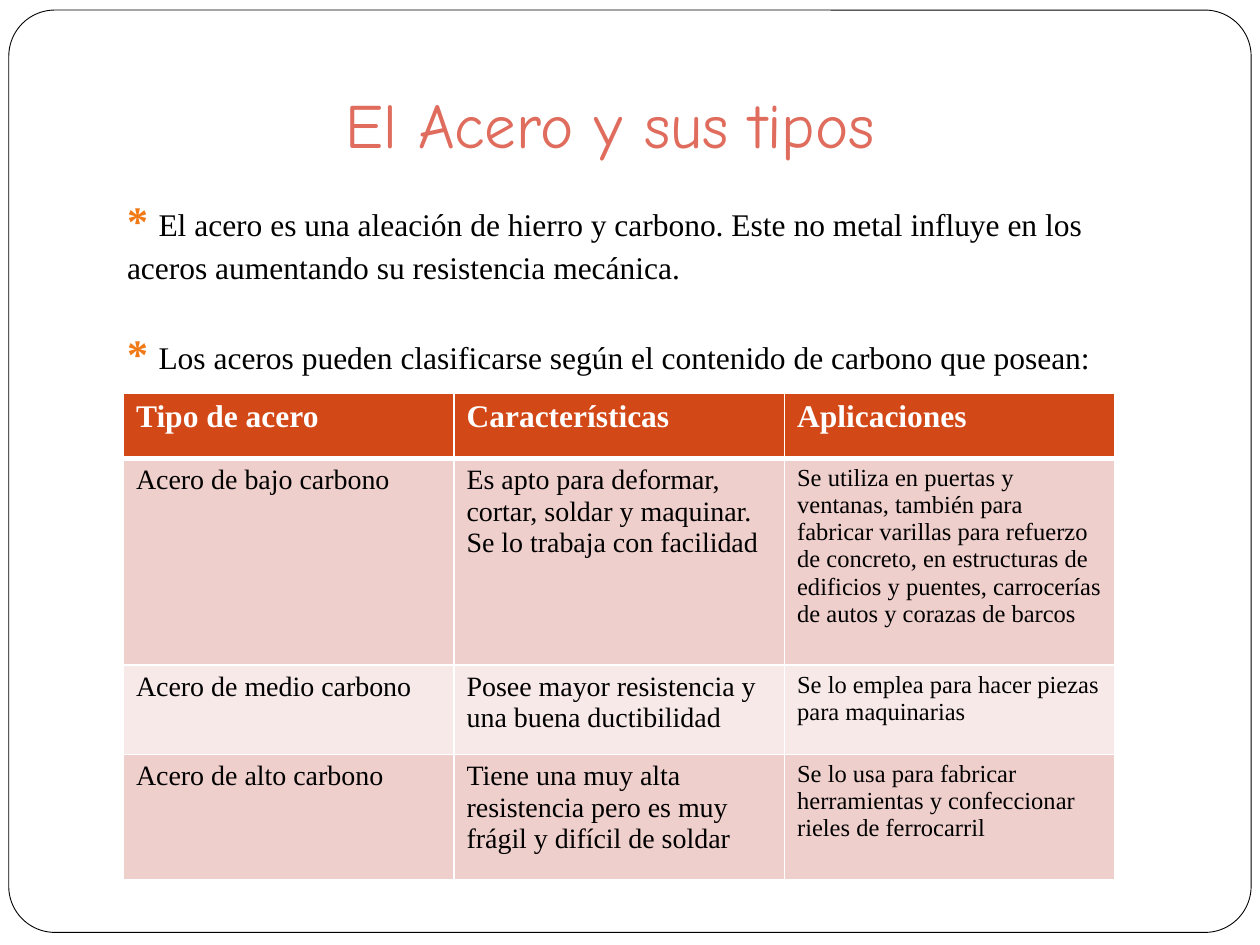
from lxml import etree
from pptx import Presentation
from pptx.dml.color import RGBColor
from pptx.enum.shapes import MSO_SHAPE
from pptx.enum.text import MSO_ANCHOR, PP_ALIGN
from pptx.oxml.ns import qn
from pptx.util import Inches, Pt

ROUNDED = MSO_SHAPE.ROUNDED_RECTANGLE
BOTTOM, LEFT = MSO_ANCHOR.BOTTOM, PP_ALIGN.LEFT

WHITE = RGBColor(0xFF, 0xFF, 0xFF)
BLACK = RGBColor(0, 0, 0)
CORAL = RGBColor(0xDF, 0x6C, 0x5D)
ORANGE = RGBColor(0xF1, 0x7A, 0x17)
HEADER = RGBColor(0xD3, 0x48, 0x17)
BANDS = [RGBColor(0xEF, 0xCF, 0xCC), RGBColor(0xF7, 0xE9, 0xE8)]

SERIF, HAND = "Times New Roman", "Comic Neue"

POINTS = [
    "El acero es una aleación de hierro y carbono. Este no metal influye en los "
    "aceros aumentando su resistencia mecánica.",
    "Los aceros pueden clasificarse según el contenido de carbono que posean:",
]
STEELS = [
    ["Tipo de acero", "Características", "Aplicaciones"],
    ["Acero de bajo carbono",
     "Es apto para deformar, cortar, soldar y maquinar. Se lo trabaja con facilidad",
     "Se utiliza en puertas y ventanas, también para fabricar varillas para refuerzo "
     "de concreto, en estructuras de edificios y puentes, carrocerías de autos y "
     "corazas de barcos"],
    ["Acero de medio carbono",
     "Posee mayor resistencia y una buena ductibilidad",
     "Se lo emplea para hacer piezas para maquinarias"],
    ["Acero de alto carbono",
     "Tiene una muy alta resistencia pero es muy frágil y difícil de soldar",
     "Se lo usa para fabricar herramientas y confeccionar rieles de ferrocarril"],
]
ROW_HEIGHTS = [0.52, 1.64, 0.71, 0.99]
BODY_SIZES = [16, 16, 14]


def box(left, top, width, height):
    return [Inches(v) for v in (left, top, width, height)]


def style(font, size, color, name=SERIF, bold=False):
    font.size, font.name, font.bold = Pt(size), name, bold
    font.color.rgb = color


def add_frame(s):
    sp = s.shapes.add_shape(ROUNDED, *box(0.07, 0.08, 9.86, 7.32))
    sp.adjustments[0] = 0.05
    sp.shadow.inherit = False
    sp.fill.solid()
    sp.fill.fore_color.rgb = WHITE
    sp.line.color.rgb = BLACK
    sp.line.width = Pt(0.5)
    # Behind the title
    s.shapes._spTree.insert(2, sp._element)


def set_title(s, text):
    title = s.shapes.title
    title.left, title.top, title.width, title.height = box(2.64, 0.13, 6.13, 1.25)
    tf = title.text_frame
    tf.text = text
    tf.vertical_anchor = BOTTOM
    tf.margin_bottom = Inches(0.1)
    p = tf.paragraphs[0]
    p.alignment = LEFT
    style(p.font, 36, CORAL, HAND)


def add_points(s, points):
    tf = s.shapes.add_textbox(*box(0.91, 1.47, 8.19, 1.51)).text_frame
    tf.word_wrap = True
    for i, text in enumerate(points):
        p = tf.add_paragraph() if i else tf.paragraphs[0]
        p.line_spacing = 1.07
        p.space_before = Pt(22 if i else 0)
        star, r = p.add_run(), p.add_run()
        star.text, r.text = "* ", text
        style(star.font, 24, ORANGE, bold=True)
        style(r.font, 18, BLACK)


def set_borders(cell, widths):
    """Draw white borders; widths maps each side (L, R, T, B) to points."""
    tcPr = cell._tc.get_or_add_tcPr()
    for i, (side, width) in enumerate(widths.items()):
        ln = etree.Element(qn(f"a:ln{side}"), w=str(Pt(width)))
        fill = etree.SubElement(ln, qn("a:solidFill"))
        etree.SubElement(fill, qn("a:srgbClr"), val=str(WHITE))
        tcPr.insert(i, ln)


def add_steel_table(s):
    cols = len(STEELS[0])
    table = s.shapes.add_table(len(STEELS), cols,
                               *box(0.98, 3.12, 7.87, sum(ROW_HEIGHTS))).table
    for row, height in zip(table.rows, ROW_HEIGHTS):
        row.height = Inches(height)
    for i, texts in enumerate(STEELS):
        for j, text in enumerate(texts):
            cell = table.cell(i, j)
            cell.text = text
            cell.fill.solid()
            cell.fill.fore_color.rgb = BANDS[(i - 1) % 2] if i else HEADER
            font = cell.text_frame.paragraphs[0].font
            if i:
                style(font, BODY_SIZES[j], BLACK)
            else:
                style(font, 18, WHITE, bold=True)
            # Thick rule between header and body
            set_borders(cell, {"L": 1, "R": 1, "T": 3 if i == 1 else 1,
                               "B": 1 if i else 3})


def main():
    prs = Presentation()
    prs.slide_width, prs.slide_height = Inches(10), Inches(7.5)
    s = prs.slides.add_slide(prs.slide_layouts[5])
    add_frame(s)
    set_title(s, "El Acero y sus tipos")
    add_points(s, POINTS)
    add_steel_table(s)
    prs.save("out.pptx")


if __name__ == "__main__":
    main()
